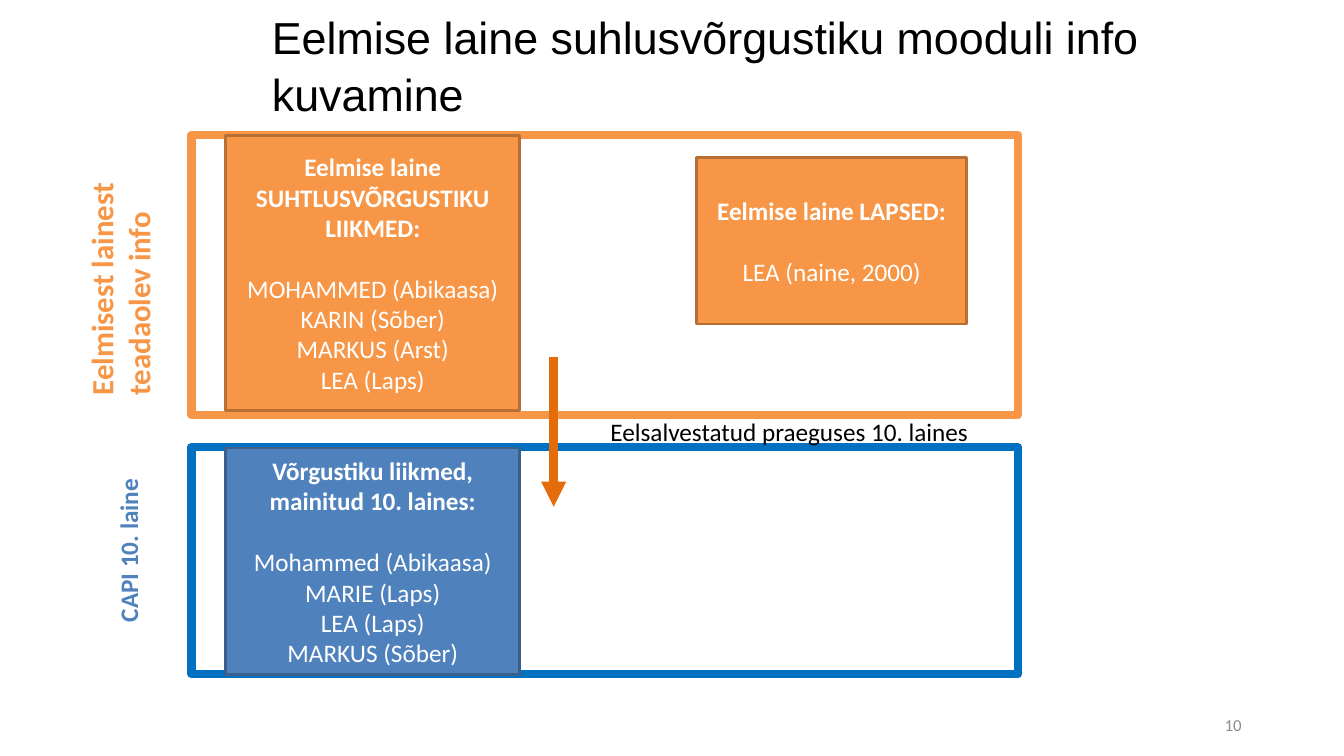
import pptx
import pptx.util
import pptx.dml.color
import pptx.enum.shapes
import pptx.enum.text
import pptx.oxml
import pptx.oxml.ns

Pt = pptx.util.Pt
ALIGN = pptx.enum.text.PP_ALIGN
ANCHOR = pptx.enum.text.MSO_ANCHOR
SHAPE = pptx.enum.shapes.MSO_SHAPE
COLORS = {
    "white": "FFFFFF", "black": "000000", "grey": "8C8C8C",
    "orange": "F79646", "orange_edge": "B76F34", "arrow": "E46C0A",
    "blue": "4F81BD", "blue_edge": "3A5F8C", "blue_frame": "0070C0",
}


def rgb(name):
    return pptx.dml.color.RGBColor.from_string(COLORS[name])


def assign(obj, **formats):
    for key, value in formats.items():
        setattr(obj, key, value)


def write(tf, lines, size, color, font="Calibri", bold=False, **formats):
    assign(tf, word_wrap=True, auto_size=pptx.enum.text.MSO_AUTO_SIZE.NONE)
    for i, line in enumerate(lines):
        p = tf.paragraphs[0] if i == 0 else tf.add_paragraph()
        assign(p, **formats)
        r = p.add_run()
        r.text = line
        assign(r.font, name=font, size=Pt(size), bold=bold)
        r.font.color.rgb = rgb(color)


def add_title(s, box, text):
    sp = s.shapes.title
    assign(sp, **dict(zip(("left", "top", "width", "height"), map(Pt, box))))
    sp.text_frame.vertical_anchor = ANCHOR.TOP
    write(sp.text_frame, [text], 32, "black", "Arial",
          alignment=ALIGN.LEFT, line_spacing=1.05)


def add_rect(s, box, fill, edge, weight):
    sp = s.shapes.add_shape(SHAPE.RECTANGLE, *map(Pt, box))
    sp.shadow.inherit = False
    sp.fill.solid()
    sp.fill.fore_color.rgb = rgb(fill)
    sp.line.color.rgb = rgb(edge)
    sp.line.width = Pt(weight)
    return sp


def add_card(s, box, fill, edge, heading, members):
    tf = add_rect(s, box, fill, edge, 2).text_frame
    tf.vertical_anchor = ANCHOR.MIDDLE
    write(tf, [heading] + members, 18, "white", alignment=ALIGN.CENTER)
    tf.paragraphs[0].runs[0].font.bold = True
    tf.paragraphs[1].space_before = Pt(22)


def add_label(s, box, lines, size, color, rotation=0, **formats):
    sp = s.shapes.add_textbox(*map(Pt, box))
    sp.rotation = rotation
    sp.text_frame.vertical_anchor = ANCHOR.MIDDLE
    write(sp.text_frame, lines, size, color, **formats)


def add_side_label(s, center, bottom, length, lines, size, color):
    depth = 72
    box = (center - length / 2, bottom - length / 2 - depth / 2, length, depth)
    add_label(s, box, lines, size, color, 270, bold=True)


def add_wave(s, box, frame, card_height, fill, edge, heading, members):
    left, top, width, height = box
    add_rect(s, box, "white", frame, 6)
    add_card(s, (left + 24.5, top + 0.5, 210, card_height),
             fill, edge, heading, members)


def add_arrow(s, x, top, bottom):
    c = s.shapes.add_connector(pptx.enum.shapes.MSO_CONNECTOR.STRAIGHT,
                               Pt(x), Pt(top), Pt(x), Pt(bottom))
    c.line.color.rgb = rgb("arrow")
    c.line.width = Pt(6)
    ns = pptx.oxml.ns.nsdecls("a")
    c.line._get_or_add_ln().append(
        pptx.oxml.parse_xml(f'<a:tailEnd {ns} type="triangle"/>'))
    c._element.spPr.append(pptx.oxml.parse_xml(f"<a:effectLst {ns}/>"))


def build_slide(prs):
    s = prs.slides.add_slide(prs.slide_layouts[5])
    add_title(s, (187, 1.5, 761, 85),
              "Eelmise laine suhlusvõrgustiku mooduli info kuvamine")
    add_wave(s, (136.8, 96.5, 590.4, 200), "orange", 196, "orange", "orange_edge",
             "Eelmise laine SUHTLUSVÕRGUSTIKU LIIKMED:",
             ["MOHAMMED (Abikaasa)", "KARIN (Sõber)", "MARKUS (Arst)", "LEA (Laps)"])
    add_wave(s, (136.8, 319.5, 590.4, 162), "blue_frame", 162, "blue", "blue_edge",
             "Võrgustiku liikmed, mainitud 10. laines:",
             ["Mohammed (Abikaasa)", "MARIE (Laps)", "LEA (Laps)", "MARKUS (Sõber)"])
    add_side_label(s, 85.5, 289.5, 175, ["Eelmisest lainest", "teadaolev info"],
                   22, "orange")
    add_side_label(s, 91.5, 451.5, 125, ["CAPI 10. laine"], 18, "blue")
    add_label(s, (429, 291.5, 285, 34), ["Eelsalvestatud praeguses 10. laines"],
              18, "black")
    add_arrow(s, 395.5, 255, 362)
    add_card(s, (497.5, 112.5, 193, 119), "orange", "orange_edge",
             "Eelmise laine LAPSED:", ["LEA (naine, 2000)"])
    add_label(s, (678, 503.5, 216, 29), ["10"], 12, "grey", alignment=ALIGN.RIGHT)


def main():
    prs = pptx.Presentation()
    assign(prs, slide_width=Pt(960), slide_height=Pt(540))
    build_slide(prs)
    prs.save("out.pptx")


if __name__ == "__main__":
    main()
